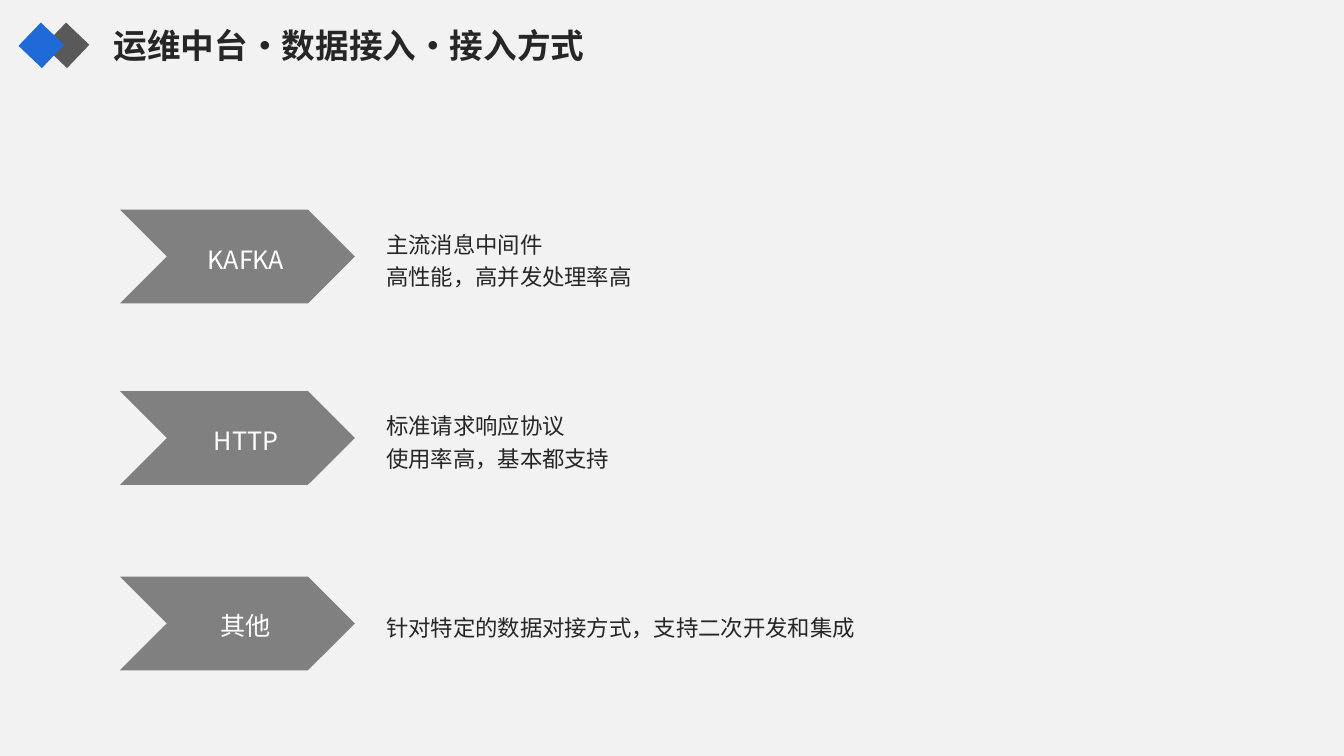
from lxml import etree
from pptx import Presentation
from pptx.dml.color import RGBColor
from pptx.enum.shapes import MSO_SHAPE as Shape
from pptx.enum.text import MSO_ANCHOR as Anchor, PP_ALIGN as Align
from pptx.oxml.ns import qn
from pptx.util import Inches, Pt

TITLE = "运维中台·数据接入·接入方式"
METHODS = [
    (2.08, "KAFKA", ["主流消息中间件", "高性能，高并发处理率高"]),
    (3.88, "HTTP", ["标准请求响应协议", "使用率高，基本都支持"]),
    (5.72, "其他", ["针对特定的数据对接方式，支持二次开发和集成"]),
]

FONT = "Noto Sans CJK SC"
BACKGROUND = RGBColor(0xF2, 0xF2, 0xF2)
INK = RGBColor(0x26, 0x26, 0x26)
WHITE = RGBColor(0xFF, 0xFF, 0xFF)
ARROW_GRAY = RGBColor(0x80, 0x80, 0x80)
DARK_GRAY = RGBColor(0x59, 0x59, 0x59)
BLUE = RGBColor(0x20, 0x6A, 0xD7)
DIAMONDS = [(0.5, DARK_GRAY), (0.25, BLUE)]

ARROW_LEFT, ARROW_WIDTH, ARROW_HEIGHT = 1.19, 2.33, 0.93
NOTCH = ARROW_HEIGHT / 2


def paint(shape, color):
    shape.shadow.inherit = False
    shape.fill.solid()
    shape.fill.fore_color.rgb = color
    shape.line.fill.background()


def add_text(page, place, lines, size, color, bold=False, align=Align.LEFT, spacing=1.0):
    box = page.shapes.add_textbox(*map(Inches, place))
    frame = box.text_frame
    frame.word_wrap = True
    frame.text = "\n".join(lines)
    for para in frame.paragraphs:
        para.alignment = align
        para.line_spacing = spacing
        for span in para.runs:
            span.font.name = FONT
            span.font.size = Pt(size)
            span.font.bold = bold
            span.font.color.rgb = color
            east_asian = etree.SubElement(span.font._element, qn("a:ea"))
            east_asian.set("typeface", FONT)
    return frame


def add_arrow(page, top):
    right = ARROW_LEFT + ARROW_WIDTH
    middle, bottom = top + NOTCH, top + ARROW_HEIGHT
    outline = [
        (ARROW_LEFT, top), (right - NOTCH, top), (right, middle),
        (right - NOTCH, bottom), (ARROW_LEFT, bottom), (ARROW_LEFT + NOTCH, middle),
    ]
    points = [(Inches(x), Inches(y)) for x, y in outline]
    builder = page.shapes.build_freeform(*points[0])
    builder.add_line_segments(points[1:], close=True)
    paint(builder.convert_to_shape(), ARROW_GRAY)


def add_method(page, top, name, lines):
    frame = add_text(page, (3.7, top, 8.9, 0.96), lines, 16, INK, spacing=1.2)
    frame.vertical_anchor = Anchor.MIDDLE
    frame.margin_left = frame.margin_right = Inches(0.13)
    frame.margin_top = frame.margin_bottom = Inches(0.07)
    add_arrow(page, top)
    add_text(page, (1.77, top + 0.29, 1.34, 0.4), [name], 18, WHITE, align=Align.CENTER)


def main():
    deck = Presentation()
    deck.slide_width, deck.slide_height = Inches(13.33), Inches(7.5)
    page = deck.slides.add_slide(deck.slide_layouts[6])
    page.background.fill.solid()
    page.background.fill.fore_color.rgb = BACKGROUND

    add_text(page, (1.03, 0.2, 5.8, 0.5), [TITLE], 24, INK, bold=True)
    for left, color in DIAMONDS:
        diamond = page.shapes.add_shape(
            Shape.RECTANGLE, Inches(left), Inches(0.29), Inches(0.32), Inches(0.32))
        diamond.rotation = 43.7
        paint(diamond, color)
    for top, name, lines in METHODS:
        add_method(page, top, name, lines)
    deck.save("out.pptx")


if __name__ == "__main__":
    main()
